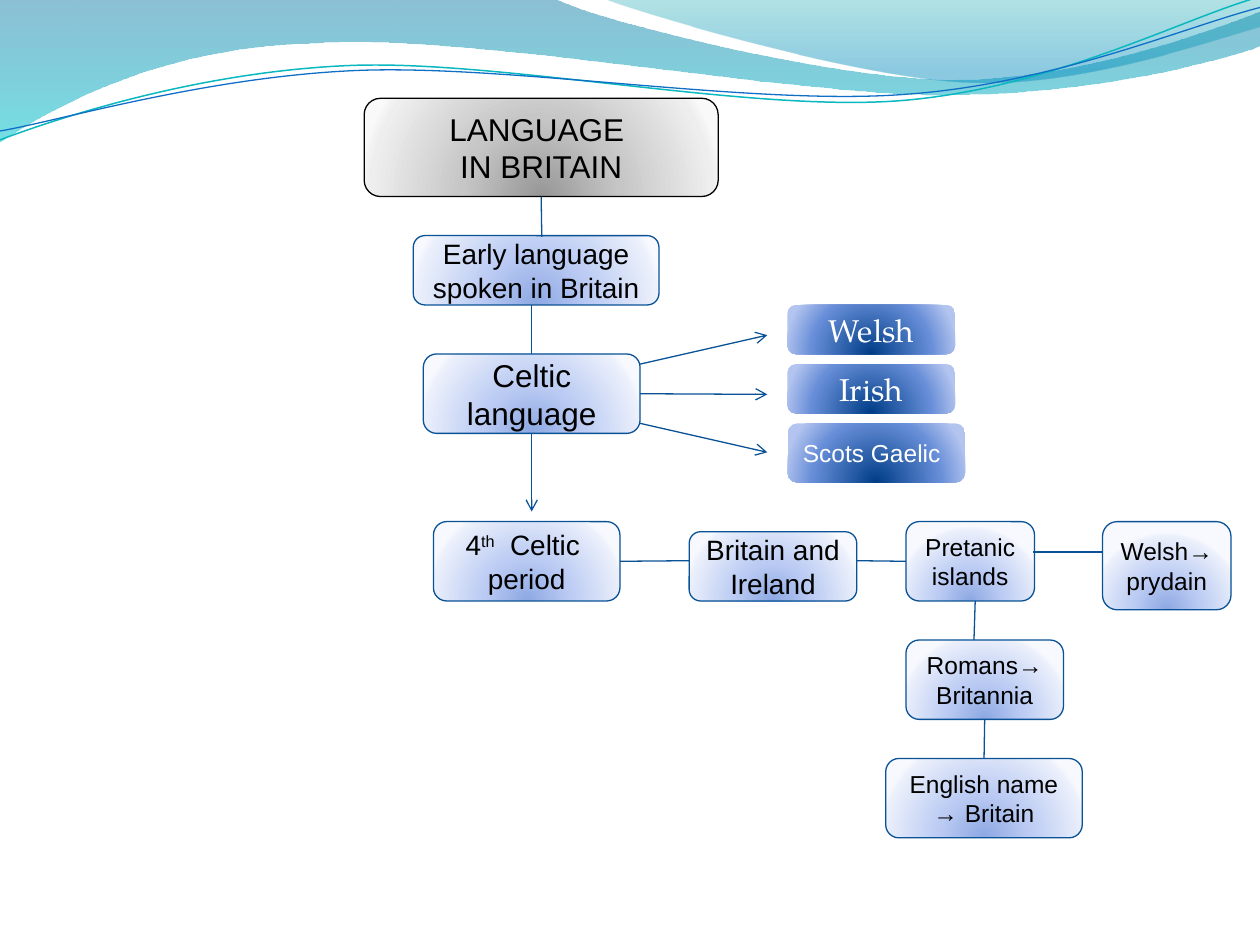
from math import cos, radians, sin

from lxml import etree
from pptx import Presentation
from pptx.dml.color import RGBColor
from pptx.enum.shapes import MSO_CONNECTOR, MSO_SHAPE
from pptx.enum.text import MSO_ANCHOR, PP_ALIGN
from pptx.oxml import parse_xml
from pptx.oxml.ns import nsdecls, qn
from pptx.util import Inches, Pt

BLACK = RGBColor(0x00, 0x00, 0x00)
WHITE = RGBColor(0xFF, 0xFF, 0xFF)
BLUE = RGBColor(0x09, 0x52, 0x95)
WAVE_TEAL = RGBColor(0x0A, 0xB8, 0xBF)
WAVE_BLUE = RGBColor(0x0F, 0x6F, 0xC6)

# Gradient stops: position %, colour, opacity %
LEFT_WAVE = [(0, RGBColor(0x00, 0x74, 0xA1), 45), (100, RGBColor(0x00, 0xC6, 0xCF), 55)]
RIGHT_WAVE = [(0, RGBColor(0x00, 0xA1, 0xA9), 30), (80, RGBColor(0x00, 0x8B, 0xBF), 45)]
GREY = [(0, RGBColor(0x97, 0x97, 0x97), 100), (43, RGBColor(0xC6, 0xC6, 0xC6), 100),
        (93, RGBColor(0xEE, 0xEE, 0xEE), 100), (100, RGBColor(0xF9, 0xF9, 0xF9), 100)]
PALE = [(0, RGBColor(0x8D, 0xA8, 0xE3), 100), (43, RGBColor(0xBB, 0xCB, 0xF3), 100),
        (93, RGBColor(0xEA, 0xEF, 0xFB), 100), (100, RGBColor(0xF7, 0xF9, 0xFF), 100)]
DARK = [(0, RGBColor(0x00, 0x3D, 0x87), 100), (68, RGBColor(0x66, 0x8D, 0xD7), 100),
        (100, RGBColor(0xB3, 0xC4, 0xEF), 100)]

DOWNWARD = '<a:lin ang="5400000" scaled="0"/>'
FROM_BELOW = ('<a:path path="circle"><a:fillToRect l="50000" t="130000" '
              'r="50000" b="-30000"/></a:path>')
TILT = 2.7


def set_gradient(shape, stops, direction):
    stop_xml = "".join(
        f'<a:gs pos="{position * 1000}"><a:srgbClr val="{color}">'
        f'<a:alpha val="{opacity * 1000}"/></a:srgbClr></a:gs>'
        for position, color, opacity in stops)
    shape.fill.background()
    properties = shape.element.spPr
    properties.replace(properties.find(qn("a:noFill")), parse_xml(
        f'<a:gradFill {nsdecls("a")} rotWithShape="1"><a:gsLst>{stop_xml}</a:gsLst>'
        f'{direction}</a:gradFill>'))


def add_curved_shape(shapes, start, segments, closed, center):
    """Draw lines (2 numbers) and Bézier curves (6 numbers), tilted about a center if given."""
    points = [start]
    for segment in segments:
        points += zip(segment[::2], segment[1::2])
    if center:
        cx, cy = center
        c, s = cos(radians(TILT)), sin(radians(TILT))
        points = [(cx + (x - cx) * c - (y - cy) * s, cy + (x - cx) * s + (y - cy) * c)
                  for x, y in points]
    points = [(Inches(x), Inches(y)) for x, y in points]
    builder = shapes.build_freeform(*points[0], scale=1.0)
    builder.add_line_segments(points[1:], close=closed)
    shape = builder.convert_to_shape()
    if center:
        shape.rotation = 360 - TILT
    lines = iter(list(shape.element.spPr.iter(qn("a:lnTo"))))
    for segment in segments:
        line = next(lines)
        if len(segment) == 6:
            line.tag = qn("a:cubicBezTo")
            for _ in range(2):
                extra = next(lines)
                line.append(extra[0])
                extra.getparent().remove(extra)
    return shape


presentation = Presentation()
presentation.slide_width = Inches(10)
presentation.slide_height = Inches(7.5)
slide = presentation.slides.add_slide(presentation.slide_layouts[6])

# Waves: start, segments, gradient, line colour, line width, center of the tilt
waves = [
    ((0, 0), [(4.4, -0.01), (4.76, 0.17, 6.64, 0.63, 7.58, 0.63),
              (8.53, 0.63, 9.58, 0.26, 10, 0.09), (10.01, 0.36),
              (9.83, 0.44, 8.7, 0.76, 7.46, 0.75), (6.22, 0.75, 3.82, 0.28, 2.57, 0.34),
              (1.29, 0.36, 0.46, 0.83, -0.01, 1.13)], LEFT_WAVE, None, None, None),
    ((4.79, -0.01), [(5.09, 0.11, 6.82, 0.62, 7.69, 0.65),
                     (8.56, 0.69, 9.61, 0.32, 10, 0.21), (10, 0)],
     RIGHT_WAVE, None, None, None),
    ((0, 1.11), [(0.48, 0.93, 1.58, 0.57, 2.77, 0.52), (3.95, 0.47, 5.93, 0.89, 7.13, 0.8),
                 (8.33, 0.71, 9.38, 0.15, 9.98, -0.02)],
     None, WAVE_TEAL, 0.85, (4.99, 0.57)),
    ((0, 1.04), [(0.47, 0.96, 1.64, 0.61, 2.83, 0.56), (4.03, 0.51, 5.97, 0.84, 7.17, 0.75),
                 (8.36, 0.67, 9.41, 0.21, 10, 0.06)],
     None, WAVE_BLUE, 0.75, (5, 0.59)),
]
for start, segments, stops, line_color, line_width, center in waves:
    wave = add_curved_shape(slide.shapes, start, segments, stops is not None, center)
    wave.shadow.inherit = False
    if stops:
        set_gradient(wave, stops, DOWNWARD)
        wave.line.fill.background()
    else:
        wave.fill.background()
        wave.line.color.rgb = line_color
        wave.line.width = Pt(line_width)

# Boxes: name, text, left, top, width, height, size, gradient, outline
boxes = [
    ("title", "LANGUAGE \nIN BRITAIN", 2.89, 0.78, 2.81, 0.78, 18, GREY, BLACK),
    ("early", "Early language spoken in Britain", 3.28, 1.87, 1.95, 0.55, 16, PALE, BLUE),
    ("celtic", "Celtic language", 3.36, 2.81, 1.72, 0.63, 18, PALE, BLUE),
    ("welsh", "Welsh", 6.25, 2.42, 1.33, 0.39, 18, DARK, None),
    ("irish", "Irish", 6.25, 2.89, 1.33, 0.39, 18, DARK, None),
    ("gaelic", "Scots Gaelic", 6.25, 3.36, 1.41, 0.47, 14, DARK, None),
    ("period", "4\nperiod", 3.44, 4.14, 1.48, 0.63, 16, PALE, BLUE),
    ("ireland", "Britain and Ireland", 5.47, 4.22, 1.33, 0.55, 16, PALE, BLUE),
    ("pretanic", "Pretanic islands", 7.19, 4.14, 1.02, 0.63, 14, PALE, BLUE),
    ("prydain", "Welsh→ prydain", 8.75, 4.14, 1.02, 0.7, 14, PALE, BLUE),
    ("romans", "Romans→ Britannia", 7.19, 5.08, 1.25, 0.63, 14, PALE, BLUE),
    ("english", "English name → Britain", 7.03, 6.02, 1.56, 0.63, 14, PALE, BLUE),
]
box_shapes = {}
for name, text, left, top, width, height, size, stops, outline in boxes:
    box = slide.shapes.add_shape(MSO_SHAPE.ROUNDED_RECTANGLE, Inches(left), Inches(top),
                                 Inches(width), Inches(height))
    box_shapes[name] = box
    box.shadow.inherit = False
    set_gradient(box, stops, FROM_BELOW)
    if outline is None:
        box.line.fill.background()
    else:
        box.line.color.rgb = outline
        box.line.width = Pt(0.75)
    box.text_frame.word_wrap = True
    box.text_frame.vertical_anchor = MSO_ANCHOR.MIDDLE
    box.text_frame.text = text
    for paragraph in box.text_frame.paragraphs:
        paragraph.alignment = PP_ALIGN.LEFT if name == "gaelic" else PP_ALIGN.CENTER
        paragraph.font.name = "TeX Gyre Pagella" if name in ("welsh", "irish") else "Arial"
        paragraph.font.size = Pt(size)
        paragraph.font.color.rgb = WHITE if stops is DARK else BLACK

ordinal_line = box_shapes["period"].text_frame.paragraphs[0]
ordinal = ordinal_line.add_run()
ordinal.text = "th"
ordinal._r.get_or_add_rPr().set("baseline", "30000")
ordinal_line.add_run().text = "  Celtic "

# Connectors: from, to, arrowhead, joined start and end as (box, side)
connectors = [
    ((4.3, 1.56), (4.3, 1.88), False, ("title", 2), None),
    ((4.22, 2.42), (4.22, 2.81), False, None, ("celtic", 0)),
    ((5.08, 2.89), (6.09, 2.66), True, None, None),
    ((5.08, 3.12), (6.09, 3.13), True, ("celtic", 3), None),
    ((5.08, 3.36), (6.09, 3.59), True, None, None),
    ((4.22, 3.44), (4.22, 4.06), True, ("celtic", 2), None),
    ((4.92, 4.45), (5.47, 4.45), False, ("period", 3), None),
    ((6.8, 4.45), (7.19, 4.45), False, None, ("pretanic", 1)),
    ((8.2, 4.38), (8.75, 4.38), False, None, None),
    ((7.74, 4.77), (7.73, 5.08), False, None, None),
    ((7.81, 5.7), (7.81, 6.02), False, ("romans", 2), ("english", 0)),
]
for (x1, y1), (x2, y2), has_arrow, begin, end in connectors:
    connector = slide.shapes.add_connector(MSO_CONNECTOR.STRAIGHT, Inches(x1), Inches(y1),
                                           Inches(x2), Inches(y2))
    if begin:
        connector.begin_connect(box_shapes[begin[0]], begin[1])
    if end:
        connector.end_connect(box_shapes[end[0]], end[1])
    connector.line.color.rgb = BLUE
    connector.line.width = Pt(0.75)
    if has_arrow:
        line_properties = connector.line._get_or_add_ln()
        etree.SubElement(line_properties, qn("a:tailEnd"), type="arrow")
    etree.SubElement(connector._element.spPr, qn("a:effectLst"))

presentation.save("out.pptx")
